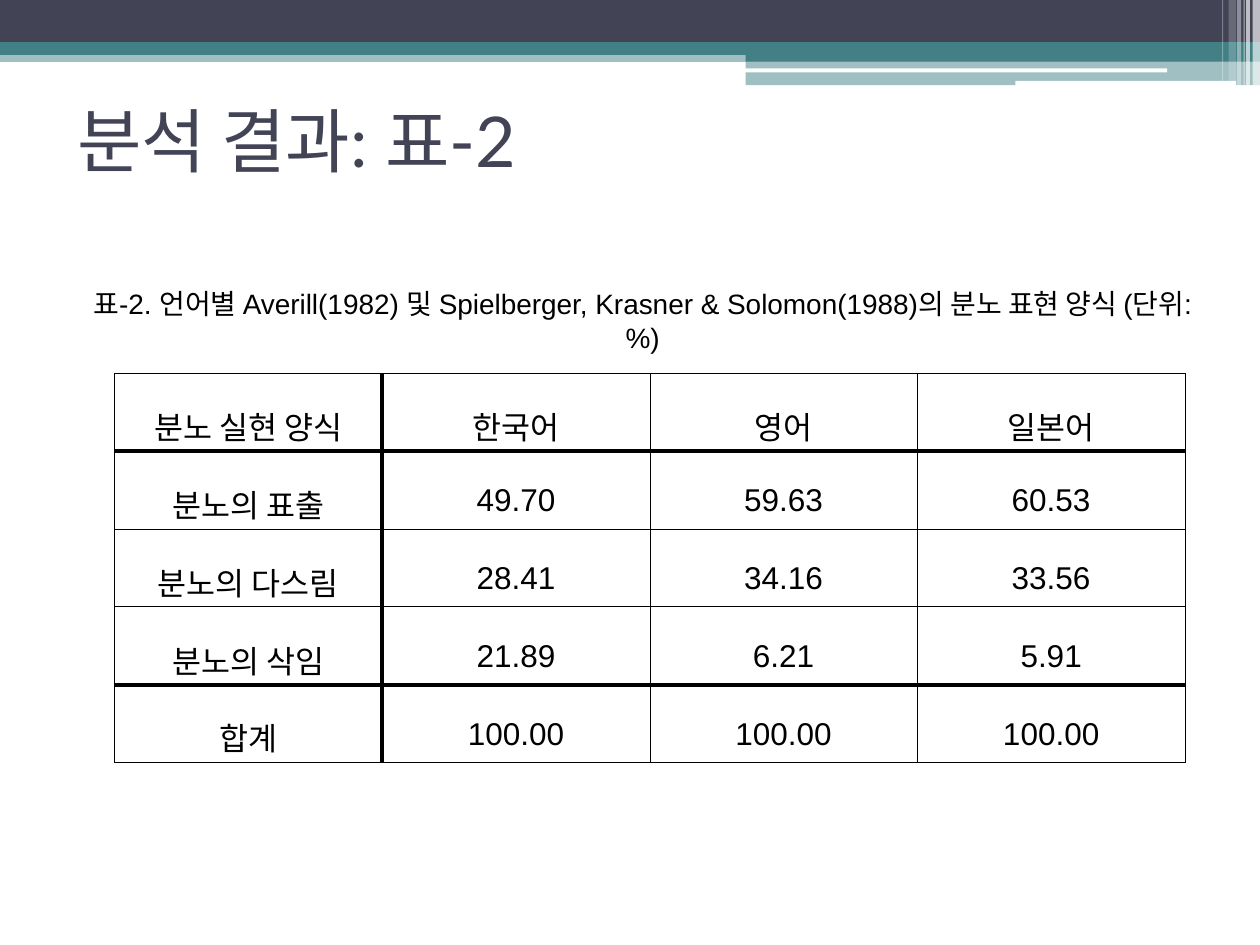
from typing import NamedTuple

import pptx
import pptx.dml.color
import pptx.enum.shapes
import pptx.enum.text
import pptx.oxml
import pptx.oxml.ns
import pptx.util

Cm = pptx.util.Cm
Pt = pptx.util.Pt
RGBColor = pptx.dml.color.RGBColor
MSO_SHAPE = pptx.enum.shapes.MSO_SHAPE
PP_ALIGN = pptx.enum.text.PP_ALIGN
MIDDLE = pptx.enum.text.MSO_ANCHOR.MIDDLE

SLATE = RGBColor(0x42, 0x44, 0x56)
TEAL = RGBColor(0x43, 0x80, 0x86)
WHITE = RGBColor(0xFF, 0xFF, 0xFF)
BLACK = RGBColor(0, 0, 0)

THIN, THICK = Pt(0.28), Pt(2.55)
THICK_COLUMN_EDGES = {1}
THICK_ROW_EDGES = {1, 4}
ROW_HEIGHT = Cm(1.57)


class Band(NamedTuple):
    """A bar of the header; lengths in centimetres, opacity in percent."""
    left: float
    top: float
    width: float
    height: float
    color: RGBColor
    opacity: int = 100
    rounded: bool = False


HEADER_BANDS = [
    Band(0, 1.02, 25.4, 0.23, TEAL, 50),
    Band(0, 0, 25.4, 0.87, SLATE),
    Band(0, 0.85, 25.4, 0.26, TEAL),
    Band(15.03, 0.99, 10.37, 0.25, TEAL),
    Band(15.03, 1.22, 10.37, 0.5, TEAL, 50),
    Band(15.02, 1.38, 8.51, 0.08, WHITE, rounded=True),
    Band(20.47, 1.63, 4.45, 0.1, WHITE, rounded=True),
    Band(25.25, 0, 0.15, 1.73, WHITE, 65),
    Band(25.12, 0, 0.08, 1.73, WHITE, 65),
    Band(25.07, 0, 0.02, 1.73, WHITE, 60),
    Band(24.94, 0, 0.08, 1.73, WHITE, 40),
    Band(24.77, 0, 0.15, 1.63, WHITE, 20),
    Band(24.64, 0, 0.02, 1.63, WHITE, 30),
]

TITLE = "분석 결과: 표-2"
CAPTION = ("표-2. 언어별 Averill(1982) 및 Spielberger, Krasner & Solomon(1988)의 "
           "분노 표현 양식 (단위: %)")
EXPRESSION_ROWS = [
    ("분노 실현 양식", "한국어", "영어", "일본어"),
    ("분노의 표출", "49.70", "59.63", "60.53"),
    ("분노의 다스림", "28.41", "34.16", "33.56"),
    ("분노의 삭임", "21.89", "6.21", "5.91"),
    ("합계", "100.00", "100.00", "100.00"),
]


def format_runs(paragraph, font_name: str, size: float, color: RGBColor) -> None:
    for run in paragraph.runs:
        run.font.name = font_name
        run.font.size = Pt(size)
        run.font.color.rgb = color


def add_band(slide, band: Band) -> None:
    kind = MSO_SHAPE.ROUNDED_RECTANGLE if band.rounded else MSO_SHAPE.RECTANGLE
    bar = slide.shapes.add_shape(
        kind, Cm(band.left), Cm(band.top), Cm(band.width), Cm(band.height))
    bar.shadow.inherit = False
    bar.line.fill.background()
    bar.fill.solid()
    bar.fill.fore_color.rgb = band.color
    if band.opacity < 100:
        color = bar.fill._xPr.find(".//" + pptx.oxml.ns.qn("a:srgbClr"))
        color.append(pptx.oxml.parse_xml(
            f'<a:alpha {pptx.oxml.ns.nsdecls("a")} val="{band.opacity * 1000}"/>'))


def set_title(slide) -> None:
    title = slide.shapes.title
    title.left, title.top = Cm(1.3), Cm(1.32)
    title.width, title.height = Cm(22.86), Cm(2.97)
    title.text_frame.text = TITLE
    title.text_frame.vertical_anchor = MIDDLE
    heading = title.text_frame.paragraphs[0]
    heading.alignment = PP_ALIGN.LEFT
    format_runs(heading, "Lato", 40, SLATE)


def add_caption(slide) -> None:
    box = slide.shapes.add_textbox(Cm(1.3), Cm(5.66), Cm(23.01), Cm(1.7))
    box.text_frame.word_wrap = True
    box.text_frame.text = CAPTION
    caption = box.text_frame.paragraphs[0]
    caption.alignment = PP_ALIGN.CENTER
    caption._p.get_or_add_pPr().set("marL", str(Cm(0.3)))
    format_runs(caption, "Arial", 16, BLACK)


def set_borders(cell, row: int, column: int) -> None:
    """Rule the cell, heavier around the header row, label column and total."""
    edges = [
        ("lnL", column in THICK_COLUMN_EDGES),
        ("lnR", column + 1 in THICK_COLUMN_EDGES),
        ("lnT", row in THICK_ROW_EDGES),
        ("lnB", row + 1 in THICK_ROW_EDGES),
    ]
    properties = cell._tc.get_or_add_tcPr()
    for position, (side, is_thick) in enumerate(edges):
        width = THICK if is_thick else THIN
        properties.insert(position, pptx.oxml.parse_xml(
            f'<a:{side} {pptx.oxml.ns.nsdecls("a")} w="{width}">'
            f'<a:solidFill><a:srgbClr val="{BLACK}"/></a:solidFill></a:{side}>'))


def add_expression_table(slide) -> None:
    row_count = len(EXPRESSION_ROWS)
    table = slide.shapes.add_table(
        row_count, len(EXPRESSION_ROWS[0]),
        Cm(2.31), Cm(7.52), Cm(21.58), ROW_HEIGHT * row_count).table
    table.first_row = False
    table.horz_banding = False
    for row, values in enumerate(EXPRESSION_ROWS):
        for column, value in enumerate(values):
            cell = table.cell(row, column)
            cell.fill.background()
            cell.vertical_anchor = MIDDLE
            cell.margin_left = cell.margin_right = Cm(0.18)
            cell.margin_top = cell.margin_bottom = Cm(0.05)
            cell.text_frame.text = value
            entry = cell.text_frame.paragraphs[0]
            entry.alignment = PP_ALIGN.CENTER
            entry.line_spacing = 1.6
            format_runs(entry, "Arial", 18, BLACK)
            set_borders(cell, row, column)


def main() -> None:
    presentation = pptx.Presentation()
    presentation.slide_width, presentation.slide_height = Cm(25.4), Cm(19.05)
    slide = presentation.slides.add_slide(
        presentation.slide_layouts.get_by_name("Title Only"))
    for band in HEADER_BANDS:
        add_band(slide, band)
    set_title(slide)
    add_caption(slide)
    add_expression_table(slide)
    presentation.save("out.pptx")


if __name__ == "__main__":
    main()
